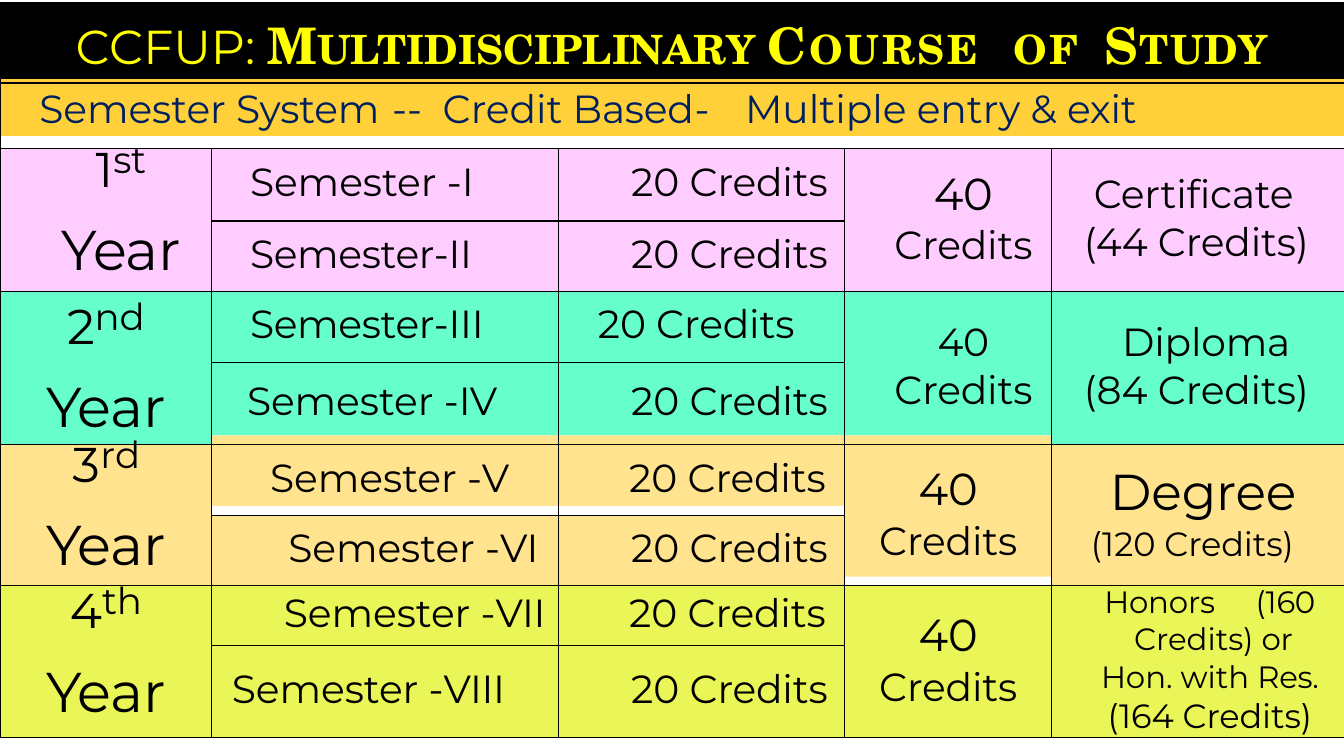
from dataclasses import dataclass, field
from itertools import accumulate

from lxml import etree
from pptx import Presentation
from pptx import util as u
from pptx.dml import color
from pptx.enum import text
from pptx.oxml import ns

CENTER, RIGHT = text.PP_ALIGN.CENTER, text.PP_ALIGN.RIGHT
COLUMNS = [2.1, 3.44, 2.84, 2.05, 2.91]
ROWS = [0.74, 0.6, 0.72, 0.7, 0.7, 0.82, 0.7, 0.7, 0.59, 0.91]


@dataclass(frozen=True)
class Theme:
    sans: str = "Montserrat"
    serif: str = "TeX Gyre Schola"
    ink: str = "000000"
    title: str = "FFFF00"
    subtitle: str = "001F5F"
    gold: str = "FFD03A"
    pink: str = "FFCCFF"
    mint: str = "66FFCC"
    sand: str = "FFE38F"
    lime: str = "EAF558"
    ordinal: float = 60
    suffix: float = 26.5
    year: float = 40
    display: float = 36
    heading: float = 34
    total: float = 32
    body: float = 28
    small: float = 24
    note: float = 22


THEME = Theme()


@dataclass
class Run:
    words: str
    size: float = THEME.body
    spacing: float = 0
    ink: str = THEME.ink
    font: str = THEME.sans
    bold: bool = False
    caps: bool = False
    baseline: int = 0


@dataclass
class Para:
    runs: list
    align: object = None
    left: float = 0
    indent: float = 0
    right: float = 0
    before: float = 0
    line: object = None
    tabs: list = field(default_factory=list)


class Board:
    def __init__(self, theme):
        self.theme = theme
        self.deck = Presentation()
        self.deck.slide_width, self.deck.slide_height = u.Inches(13.33), u.Inches(7.5)
        self.slide = self.deck.slides.add_slide(self.deck.slide_layouts[6])
        self.column_edges = list(accumulate(COLUMNS, initial=0))
        self.row_edges = list(accumulate(ROWS, initial=0.04))

    def x(self, column):
        return u.Inches(min(self.column_edges[column], 13.33))

    def y(self, row):
        whole = int(row)
        return u.Inches(self.row_edges[whole] + (row - whole) * ROWS[whole])

    def panels(self, *panels):
        group = self.slide.shapes.add_group_shape()
        for fill, blocks in panels:
            outline = None
            for left, top, right, bottom in blocks:
                x1, y1, x2, y2 = self.x(left), self.y(top), self.x(right), self.y(bottom)
                if outline is None:
                    outline = group.shapes.build_freeform(x1, y1, scale=1.0)
                else:
                    outline.move_to(x1, y1)
                outline.add_line_segments([(x2, y1), (x2, y2), (x1, y2)], close=True)
            panel = outline.convert_to_shape()
            panel.shadow.inherit = False
            panel.fill.solid()
            panel.fill.fore_color.rgb = color.RGBColor.from_string(fill)
            panel.line.fill.background()

    def table(self):
        frame = self.slide.shapes.add_table(
            len(ROWS), len(COLUMNS), 0, u.Inches(0.03),
            u.Inches(sum(COLUMNS)), u.Inches(sum(ROWS) + 0.05))
        self.grid = frame.table
        self.grid.first_row = self.grid.horz_banding = False
        for column, width in zip(self.grid.columns, COLUMNS):
            column.width = u.Inches(width)
        for row, height in zip(self.grid.rows, ROWS):
            row.height = u.Inches(height)
        self.grid.rows[1].height = u.Inches(0.65)
        for cell in self.grid.iter_cells():
            cell.fill.background()
            self.border(cell)

    def border(self, cell):
        properties = cell._tc.get_or_add_tcPr()
        for place, side in enumerate(("lnL", "lnR", "lnT", "lnB")):
            line = etree.Element(ns.qn(f"a:{side}"), w="12700")
            solid = etree.SubElement(line, ns.qn("a:solidFill"))
            etree.SubElement(solid, ns.qn("a:srgbClr"), val=self.theme.ink)
            properties.insert(place, line)

    def cell(self, row, column, paras, fill=None, rows=1, columns=1):
        cell = self.grid.cell(row, column)
        if rows * columns > 1:
            cell.merge(self.grid.cell(row + rows - 1, column + columns - 1))
        if fill:
            cell.fill.solid()
            cell.fill.fore_color.rgb = color.RGBColor.from_string(fill)
        cell.margin_left = cell.margin_right = cell.margin_bottom = 0
        cell.margin_top = u.Pt(paras[0].before)
        for place, para in enumerate(paras):
            body = cell.text_frame
            self.paragraph(body.add_paragraph() if place else body.paragraphs[0], para)

    def paragraph(self, target, para):
        target.alignment = para.align
        target.space_before = u.Pt(para.before)
        target.line_spacing = para.line
        properties = target._p.get_or_add_pPr()
        for key, inches in (("marL", para.left), ("marR", para.right), ("indent", para.indent)):
            properties.set(key, str(u.Inches(inches)))
        if para.tabs:
            stops = etree.SubElement(properties, ns.qn("a:tabLst"))
            for stop in para.tabs:
                etree.SubElement(stops, ns.qn("a:tab"), pos=str(u.Inches(stop)), algn="l")
        for run in para.runs:
            self.run(target.add_run(), run)

    def run(self, target, run):
        target.text = run.words
        target.font.size, target.font.name, target.font.bold = u.Pt(run.size), run.font, run.bold
        target.font.color.rgb = color.RGBColor.from_string(run.ink)
        properties = target._r.get_or_add_rPr()
        properties.set("spc", str(round(run.spacing * 100)))
        properties.set("baseline", str(run.baseline * 1000))
        if run.caps:
            properties.set("cap", "small")


def title():
    words = [("M", 0, False), ("ultidisciplinary ", 0, True), ("C", 2.1, False),
             ("ourse ", 2.1, True), ("of ", 2, True), ("S", 0.9, False), ("tudy", 0.9, True)]
    runs = [Run("CCFUP: ", THEME.heading, ink=THEME.title)]
    runs += [Run(word, THEME.display, spacing, THEME.title, THEME.serif, True, caps)
             for word, spacing, caps in words]
    return [Para(runs, left=0.75, before=1.4)]


def subtitle():
    words = [("Semester ", 0), ("System\t-", -0.1), ("-", -0.5), ("\tCredit", 0), (" Based\t", -0.1),
             ("-", -0.5), ("\tMultiple entry & ", 0), ("exit", -0.2)]
    runs = [Run(word, THEME.body, spacing, THEME.subtitle) for word, spacing in words]
    return [Para(runs, left=0.39, before=2.1, tabs=[4.39, 5.04, 8.05, 8.57])]


def year(number, suffix, line, left=0, lead=0, spacing=(-0.4, -0.2)):
    ordinal = [Run(number, THEME.ordinal, spacing[0], baseline=-17),
               Run(suffix, THEME.suffix, spacing[1])]
    return [Para(ordinal, CENTER, lead, line=u.Pt(line)),
            Para([Run("Year", THEME.year, -0.2)], CENTER, left, before=12)]


def semester(numeral, before, left=0, right=0):
    if numeral in ("II", "III"):
        runs = [Run(f"Semester-{numeral}", spacing=-0.2)]
    else:
        runs = [Run("Semester "), Run("-", spacing=-0.1),
                Run(numeral, spacing=-0.5 if len(numeral) == 1 else -0.2)]
    return [Para(runs, RIGHT if right else None, left, right=right, before=before)]


def credit_runs(opening, size=THEME.body):
    return [Run(opening, size), Run("Credits", size, -0.1)]


def credits(before, left=0, right=0):
    return [Para(credit_runs("20 "), RIGHT if right else None, left, right=right, before=before)]


def total(before, gap, left=0, size=THEME.total):
    return [Para([Run("40", size, -0.2)], CENTER, left, before=before),
            Para([Run("Credits", spacing=-0.1)], CENTER, left, before=gap)]


def award(name, opening, before, indent):
    runs = [Run(f"{name} ", spacing=-0.1), Run(opening), Run("Credits)", spacing=-0.1)]
    return [Para(runs, left=0.32, indent=indent, right=0.3, before=before)]


def degree():
    return [Para([Run("Degree", THEME.display, -0.1)], left=0.58, before=12.2),
            Para([Run("(120", THEME.small), Run(" Credits)", THEME.small, -0.1)],
                 left=0.39, before=0.7)]


def honors():
    opening = [Run("Honors\t", THEME.note, -0.1), Run("(160", THEME.note, -0.2)]
    words = [("Credits) ", 0), ("or ", -0.2), ("Hon. with ", 0), ("Res. ", -0.2)]
    closing = [Run(word, THEME.note, spacing) for word, spacing in words]
    closing += [Run("(164", THEME.small), Run(" Credits)", THEME.small, -0.1)]
    return [Para(opening, CENTER, 0.23, line=u.Pt(25.1), tabs=[1.63]),
            Para(closing, CENTER, 0.36, 0.07, 0.13, 0.1, 1.0)]


def main():
    board = Board(THEME)
    board.panels((THEME.ink, [(0, 0, 5, 1)]), (THEME.gold, [(0, 1, 5, 1.95)]))
    board.panels((THEME.mint, [(1, 4, 3, 6), (3, 4, 4, 6)]),
                 (THEME.sand, [(1, 6, 3, 7), (3, 6, 4, 8)]))
    board.table()
    board.cell(0, 0, title(), columns=5)
    board.cell(1, 0, subtitle(), columns=5)

    pink, mint, sand, lime = THEME.pink, THEME.mint, THEME.sand, THEME.lime
    years = [
        (pink, pink, pink, year("1", "st", 36.6, 0.3, 0.3),
         [(semester("I", 7.5, 0.38), credits(7.5, right=0.17)),
          (semester("II", 6.7, 0.38), credits(6.7, right=0.17))],
         total(13.2, 0.2, 0.3), award("Certificate", "(44 ", 15.8, 0.1)),
        (mint, None, None, year("2", "nd", 46.7),
         [(semester("III", 6.7, 0.38), credits(6.7, 0.39)),
          (semester("IV", 10.9, 0.35), credits(10.9, right=0.17))],
         total(19.4, 0, 0.3, THEME.body), award("Diploma", "(84 ", 19.4, 0.38)),
        (sand, None, sand, year("3", "rd", 35.9, lead=0.01, spacing=(0.3, 0.2)),
         [(semester("V", 6.8, 0.58), credits(6.8, right=0.19)),
          (semester("VI", 6.8, right=0.2), credits(6.8, right=0.17))],
         total(12.4, 0.3), degree()),
        (lime, lime, lime, year("4", "th", 39.5),
         [(semester("VII", 2.8, right=0.13), credits(2.8, right=0.19)),
          (semester("VIII", 14.4, 0.2), credits(14.4, right=0.17))],
         total(16.1, 0.3), honors()),
    ]
    for place, (fill, upper, lower, label, terms, sum_total, outcome) in enumerate(years):
        row = 2 + 2 * place
        board.cell(row, 0, label, fill, rows=2)
        for step, (pair, shade) in enumerate(zip(terms, (upper, lower))):
            for column, paras in enumerate(pair, 1):
                board.cell(row + step, column, paras, shade)
        board.cell(row, 3, sum_total, upper, rows=2)
        board.cell(row, 4, outcome, fill, rows=2)
    board.deck.save("out.pptx")


if __name__ == "__main__":
    main()
